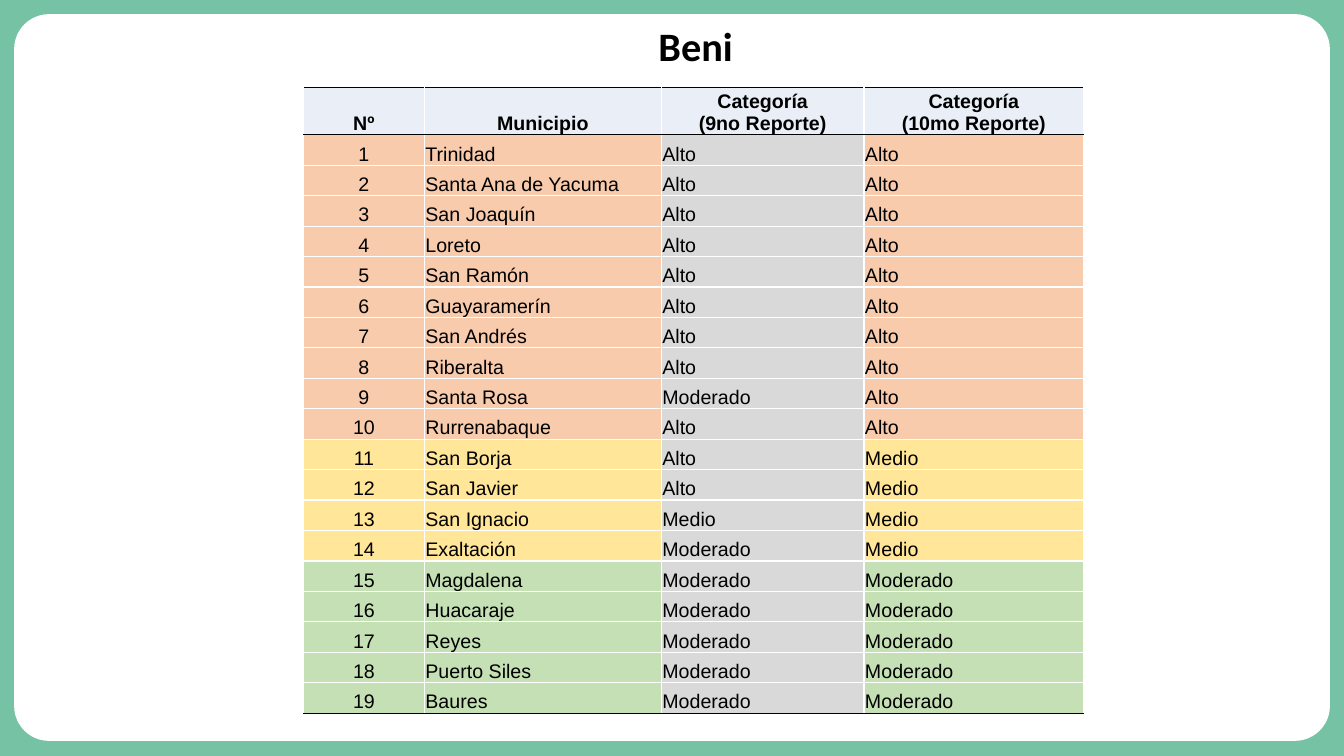
from lxml import etree
from pptx import Presentation
from pptx.dml.color import RGBColor
from pptx.enum.shapes import MSO_SHAPE
from pptx.enum.text import MSO_ANCHOR, PP_ALIGN
from pptx.oxml.ns import qn
from pptx.util import Inches, Pt

ROUNDED = MSO_SHAPE.ROUNDED_RECTANGLE
MIDDLE, BOTTOM = MSO_ANCHOR.MIDDLE, MSO_ANCHOR.BOTTOM
CENTER, LEFT = PP_ALIGN.CENTER, PP_ALIGN.LEFT

WIDTH, HEIGHT = Inches(13.33), Inches(7.5)
GREEN, WHITE, BLACK = "76C2A5", "FFFFFF", "000000"
HEADER_FILL, PREVIOUS_FILL = "EAEFF7", "D9D9D9"
CATEGORY_FILLS = {"Alto": "F8CBAD", "Medio": "FFE699", "Moderado": "C5E0B4"}

COLUMN_SHARES = (9, 17.63, 15.08, 16.35)
HEADER_SHARE, ROW_SHARE = 5.87, 4.03
HEADERS = ("Nº", "Municipio", "Categoría\n(9no Reporte)", "Categoría\n(10mo Reporte)")
MUNICIPALITIES = (
    ("Trinidad", "Alto", "Alto"),
    ("Santa Ana de Yacuma", "Alto", "Alto"),
    ("San Joaquín", "Alto", "Alto"),
    ("Loreto", "Alto", "Alto"),
    ("San Ramón", "Alto", "Alto"),
    ("Guayaramerín", "Alto", "Alto"),
    ("San Andrés", "Alto", "Alto"),
    ("Riberalta", "Alto", "Alto"),
    ("Santa Rosa", "Moderado", "Alto"),
    ("Rurrenabaque", "Alto", "Alto"),
    ("San Borja", "Alto", "Medio"),
    ("San Javier", "Alto", "Medio"),
    ("San Ignacio", "Medio", "Medio"),
    ("Exaltación", "Moderado", "Medio"),
    ("Magdalena", "Moderado", "Moderado"),
    ("Huacaraje", "Moderado", "Moderado"),
    ("Reyes", "Moderado", "Moderado"),
    ("Puerto Siles", "Moderado", "Moderado"),
    ("Baures", "Moderado", "Moderado"),
)


def rgb(color):
    return RGBColor.from_string(color)


def across(percent):
    return round(WIDTH * percent / 100)


def down(percent):
    return round(HEIGHT * percent / 100)


def box(left, top, width, height):
    return across(left), down(top), across(width), down(height)


def fill(target, color):
    target.fill.solid()
    target.fill.fore_color.rgb = rgb(color)


def style(p, font, size, bold, align):
    p.alignment = align
    p.font.name = font
    p.font.size = Pt(size)
    p.font.bold = bold
    p.font.color.rgb = rgb(BLACK)


def add_panel(s):
    sp = s.shapes.add_shape(ROUNDED, *box(1.05, 1.87, 97.9, 96.13))
    sp.adjustments[0] = 0.048
    sp.shadow.inherit = False
    fill(sp, WHITE)
    sp.line.fill.background()


def add_title(s, text):
    tf = s.shapes.add_textbox(*box(3.9, 2.8, 95.73 - 3.6 + 3.6, 7.33)).text_frame
    tf.word_wrap = True
    tf.vertical_anchor = MIDDLE
    p = tf.paragraphs[0]
    p.text = text
    p.line_spacing = 0.9
    style(p, "Calibri", 28.8, True, CENTER)


def add_borders(cell, top, bottom):
    tc_pr = cell._tc.get_or_add_tcPr()
    for side, color in (("L", WHITE), ("R", WHITE), ("T", top), ("B", bottom)):
        ln = etree.SubElement(tc_pr, qn(f"a:ln{side}"), w=str(Pt(1)))
        solid = etree.SubElement(ln, qn("a:solidFill"))
        etree.SubElement(solid, qn("a:srgbClr"), val=color)


def fill_cell(cell, text, color, bold, align, inset, top, bottom):
    add_borders(cell, top, bottom)
    fill(cell, color)
    cell.vertical_anchor = BOTTOM
    cell.margin_left = cell.margin_right = cell.margin_top = Inches(inset)
    cell.margin_bottom = 0
    cell.text_frame.text = text
    for p in cell.text_frame.paragraphs:
        style(p, "Arial", 14, bold, align)


def add_category_table(s):
    last = len(MUNICIPALITIES)
    height = HEADER_SHARE + ROW_SHARE * last
    frame = s.shapes.add_table(last + 1, len(HEADERS),
                               *box(22.58, 11.6, sum(COLUMN_SHARES), height))
    table = frame.table
    table.first_row = table.horz_banding = False
    for column, share in zip(table.columns, COLUMN_SHARES):
        column.width = across(share)
    for i, row in enumerate(table.rows):
        row.height = down(ROW_SHARE if i else HEADER_SHARE)
    for j, text in enumerate(HEADERS):
        fill_cell(table.cell(0, j), text, HEADER_FILL, True, CENTER, 0, BLACK, BLACK)
    for i, municipality in enumerate(MUNICIPALITIES, 1):
        top = BLACK if i == 1 else WHITE
        bottom = BLACK if i == last else WHITE
        category_fill = CATEGORY_FILLS[municipality[-1]]
        for j, text in enumerate((str(i), *municipality)):
            color = PREVIOUS_FILL if j == 2 else category_fill
            align, inset = (LEFT, 0.01) if j else (CENTER, 0)
            fill_cell(table.cell(i, j), text, color, False, align, inset, top, bottom)


def main():
    prs = Presentation()
    prs.slide_width, prs.slide_height = WIDTH, HEIGHT
    s = prs.slides.add_slide(prs.slide_layouts[6])
    fill(s.background, GREEN)
    add_panel(s)
    add_title(s, "Beni")
    add_category_table(s)
    prs.save("out.pptx")


if __name__ == "__main__":
    main()
